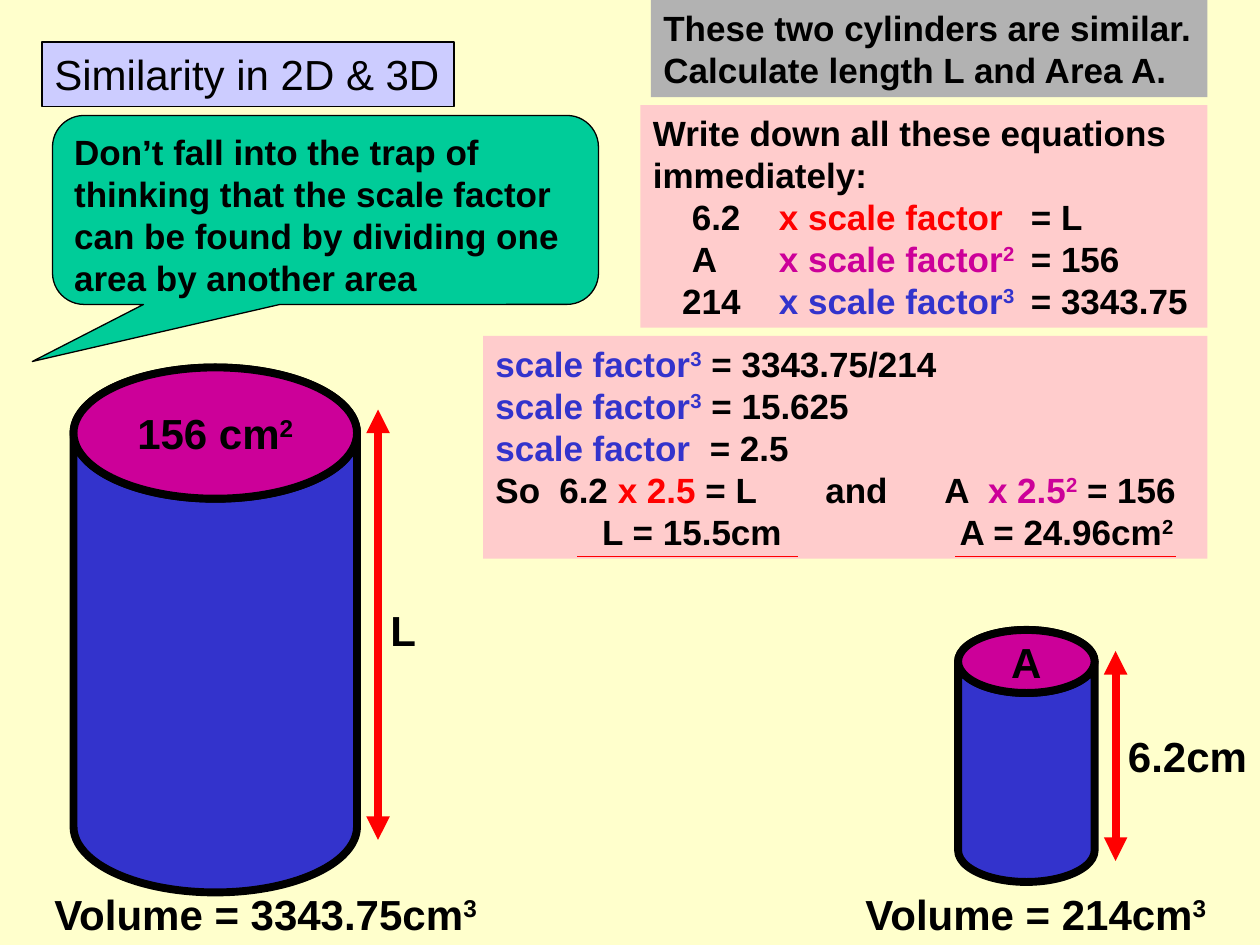
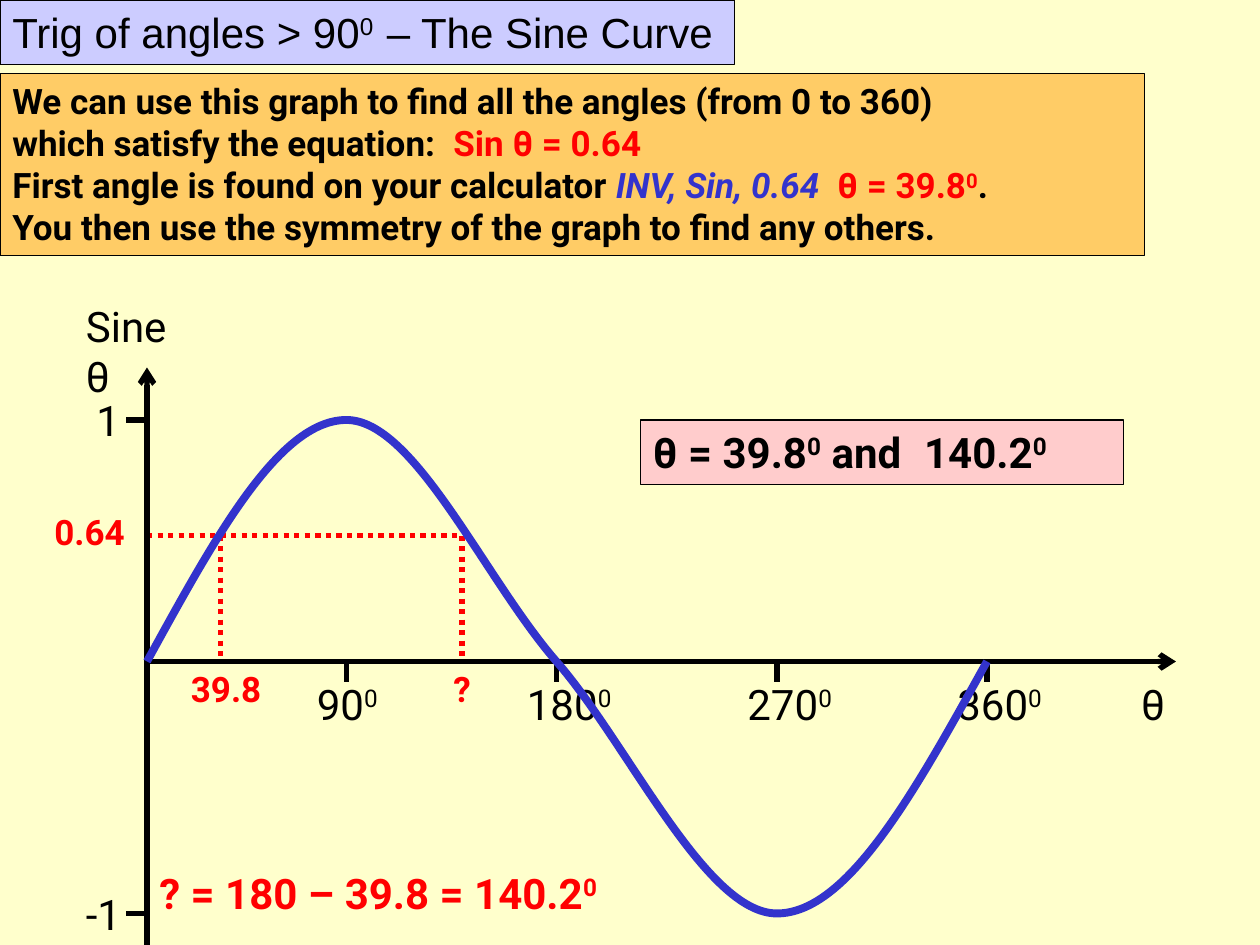
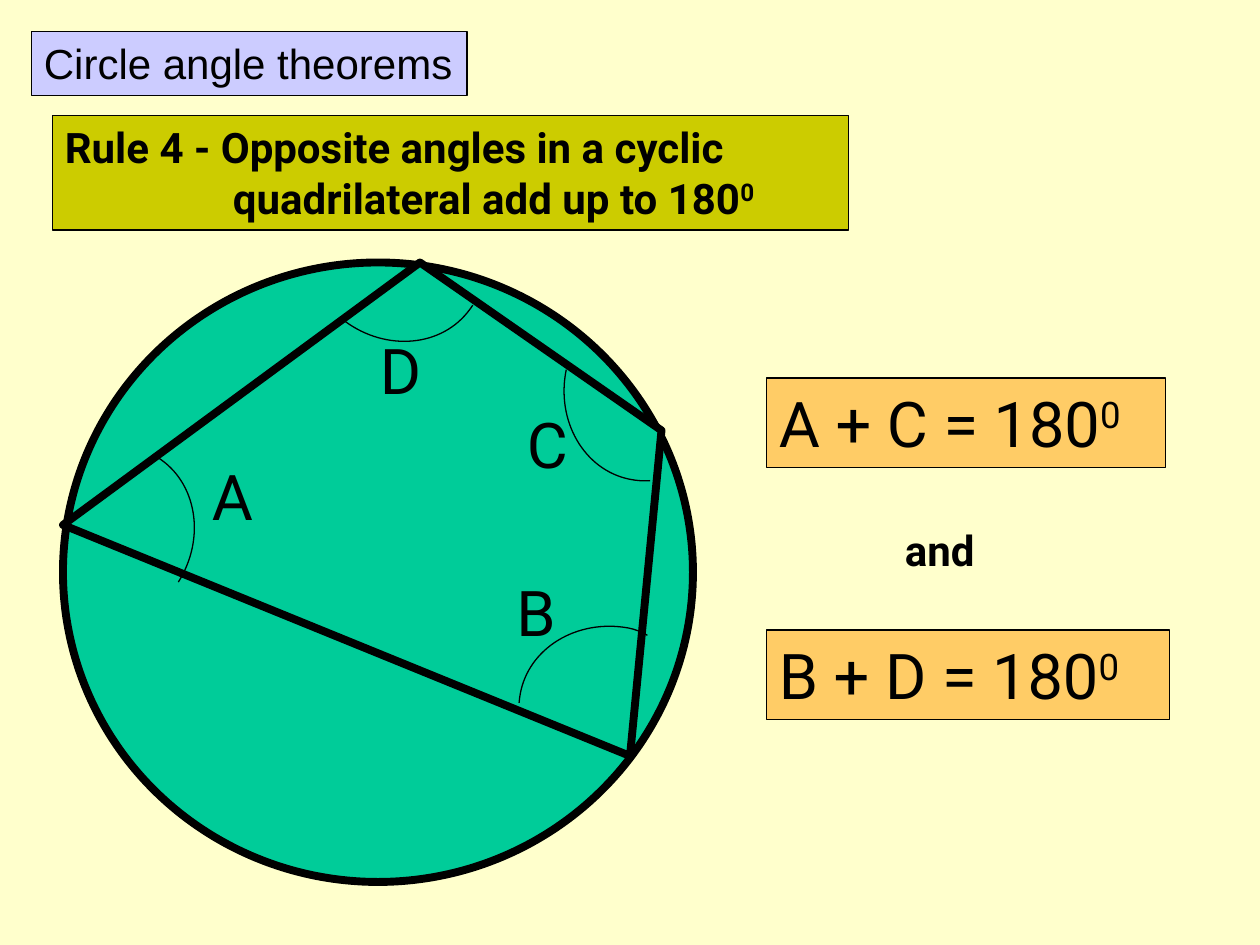
from dataclasses import dataclass

import lxml.etree
import pptx
import pptx.dml.color
import pptx.enum.dml
import pptx.enum.shapes
import pptx.enum.text
import pptx.oxml.ns
import pptx.util

Pt = pptx.util.Pt
Shape = pptx.enum.shapes.MSO_SHAPE
Align = pptx.enum.text.PP_ALIGN
Anchor = pptx.enum.text.MSO_ANCHOR
color_of = pptx.dml.color.RGBColor.from_string
qn = pptx.oxml.ns.qn


@dataclass(frozen=True)
class Theme:
    cream: str = "FFFFCC"
    lilac: str = "CCCCFF"
    gray: str = "B2B2B2"
    pink: str = "FFCCCC"
    orange: str = "FFCC66"
    olive: str = "CCCC00"
    green: str = "00CC99"
    blue: str = "3333CC"
    magenta: str = "CC0099"
    red: str = "FF0000"
    black: str = "000000"
    plain_font: str = "Arial"
    graph_font: str = "Roboto"
    body: int = 20
    heading: int = 24
    letter: int = 36
    thin: float = 0.75
    axis: float = 3
    thick: float = 4.5


theme = Theme()


def add_box(slide, place, lines=(), kind=None, fill=None, outline=0, size=theme.heading,
            font=theme.plain_font, bold=True, color=theme.black, centered=False,
            wrap=True, tabs=None, adjustments=()):
    """Add a shape, or a text box if kind is None.

    A line is a string or a list of runs: strings or (text, color, italic).
    Every second part between ^ marks is superscript. tabs maps line numbers to tab stops.
    """
    place = [Pt(length) for length in place]
    if kind is None:
        shape = slide.shapes.add_textbox(*place)
    else:
        shape = slide.shapes.add_shape(kind, *place)
        shape.shadow.inherit = False
        shape.fill.solid()
        shape.fill.fore_color.rgb = color_of(fill)
        if outline:
            shape.line.color.rgb = color_of(theme.black)
            shape.line.width = Pt(outline)
        else:
            shape.line.fill.background()
    for index, value in enumerate(adjustments):
        shape.adjustments[index] = value

    frame = shape.text_frame
    frame.word_wrap = wrap
    frame.vertical_anchor = Anchor.MIDDLE if centered else Anchor.TOP
    for number, line in enumerate(lines):
        paragraph = frame.add_paragraph() if number else frame.paragraphs[0]
        paragraph.alignment = Align.CENTER if centered else Align.LEFT
        stops = (tabs or {}).get(number)
        if stops:
            tab_list = lxml.etree.SubElement(paragraph._p.get_or_add_pPr(), qn("a:tabLst"))
            for stop in stops:
                lxml.etree.SubElement(tab_list, qn("a:tab"), pos=str(Pt(stop)), algn="l")
        paragraph.font.name = font
        paragraph.font.size = Pt(size)
        paragraph.font.bold = bold
        paragraph.font.color.rgb = color_of(color)
        for piece in [line] if isinstance(line, str) else line:
            text, run_color, *italic = (piece, None) if isinstance(piece, str) else piece
            for part_number, part in enumerate(text.split("^")):
                if not part:
                    continue
                run = paragraph.add_run()
                run.text = part
                if run_color:
                    run.font.color.rgb = color_of(run_color)
                if italic:
                    run.font.italic = True
                if part_number % 2:
                    run._r.get_or_add_rPr().set("baseline", "30000")
    return shape


def add_line(slide, start, end, color, width, dotted=False, head=None, tail=None):
    connector = slide.shapes.add_connector(
        pptx.enum.shapes.MSO_CONNECTOR.STRAIGHT, *[Pt(value) for value in (*start, *end)])
    connector.line.color.rgb = color_of(color)
    connector.line.width = Pt(width)
    if dotted:
        connector.line.dash_style = pptx.enum.dml.MSO_LINE.ROUND_DOT
    properties = connector._element.spPr
    for tag, arrow in (("a:headEnd", head), ("a:tailEnd", tail)):
        if arrow:
            lxml.etree.SubElement(properties.find(qn("a:ln")), qn(tag), type=arrow)
    lxml.etree.SubElement(properties, qn("a:effectLst"))


presentation = pptx.Presentation()
presentation.slide_width = Pt(720)
presentation.slide_height = Pt(540)
background = presentation.slide_master.background.fill
background.solid()
background.fore_color.rgb = color_of(theme.cream)

slides = []
for title, place in (
    ("Similarity in 2D & 3D", (24, 24, 235.5, 36.75)),
    ("Trig of angles > 90^0^\t– The Sine Curve", (0, 0, 419.75, 36.75)),
    ("Circle angle theorems", (18, 18, 249, 36.75)),
):
    slide = presentation.slides.add_slide(presentation.slide_layouts[6])
    add_box(slide, place, [title], Shape.RECTANGLE, theme.lilac, theme.thin,
            bold=False, wrap=False, tabs={0: (214,)})
    slides.append(slide)
similarity, sine, circle = slides

# Similarity: the two cylinders
for body, lid_height, ratio, area, arrow, length, length_place, volume, volume_place in (
    ((547.5, 360, 78, 144), 36, 0.462, "A", (637.5, 372, 492),
     "6.2cm", (637.5, 414, 83, 36), "Volume = 214cm^3", (487.5, 504, 222, 36)),
    ((42, 210, 162, 300), 75, 0.463, "156 cm^2", (216, 234, 480),
     "L", (216, 342, 29, 36), "Volume = 3343.75cm^3", (24, 504, 288, 36)),
):
    left, top, width, height = body
    add_box(similarity, body, kind=Shape.CAN, fill=theme.blue, outline=theme.thick,
            adjustments=[ratio])
    add_box(similarity, (left, top, width, lid_height), [area], Shape.OVAL, theme.magenta,
            theme.thick, centered=True, wrap=False)
    arrow_x, arrow_top, arrow_bottom = arrow
    add_line(similarity, (arrow_x, arrow_top), (arrow_x, arrow_bottom), theme.red, theme.thick,
             head="triangle", tail="triangle")
    add_box(similarity, length_place, [length], wrap=False)
    add_box(similarity, volume_place, [volume])

# Similarity: the question and its working
add_box(similarity, (372, 0, 318, 55.5),
        ["These two cylinders are similar.", "Calculate length L and Area A."],
        Shape.RECTANGLE, theme.gray, size=theme.body)
add_box(similarity, (366, 60, 324, 127.25), [
    "Write down all these equations",
    "immediately:",
    ["\t6.2\t", ("x scale factor", theme.red), "\t= L"],
    ["\tA\t", ("x scale factor^2", theme.magenta), "\t= 156"],
    ["\t214\t", ("x scale factor^3", theme.blue), "\t= 3343.75"],
], Shape.RECTANGLE, theme.pink, size=theme.body,
    tabs={2: (22.25, 72, 216), 3: (22.25, 72, 216), 4: (16.75, 72, 216)})
add_box(similarity, (276, 192, 414, 127.25), [
    [("scale factor^3", theme.blue), " = 3343.75/214"],
    [("scale factor^3", theme.blue), " = 15.625"],
    [("scale factor", theme.blue), "\t= 2.5"],
    ["So\t6.2 ", ("x 2.5", theme.red), " = L\tand\tA\t", ("x 2.5^2", theme.magenta), " = 156"],
    "\tL = 15.5cm\tA = 24.96cm^2",
], Shape.RECTANGLE, theme.pink, size=theme.body,
    tabs={2: (122.5,), 3: (36.5, 188.5, 256.5, 281.5), 4: (61, 265.25)})
for left in (330, 546):
    add_line(similarity, (left, 318), (left + 126, 318), theme.red, theme.thin)
add_box(similarity, (30, 66, 312, 108),
        ["Don’t fall into the trap of thinking that the scale factor "
         "can be found by dividing one area by another area"],
        Shape.ROUNDED_RECTANGULAR_CALLOUT, theme.green, theme.thin, theme.body,
        adjustments=(-0.537, 0.802, 0.167))

# Sine curve: readings, axes and scales
origin_x, origin_y = 84, 378
reading_y = 306
for start, end in (
    ((origin_x, reading_y), (126, reading_y)),
    ((126, reading_y), (126, origin_y)),
    ((origin_x, reading_y), (264, reading_y)),
    ((264, reading_y), (264, origin_y)),
):
    add_line(sine, start, end, theme.red, theme.axis, dotted=True)
for text, place in (
    ("?", (252, 378, 26, 31)),
    ("39.8", (102, 378, 59, 31)),
    ("0.64", (24, 288, 59, 31)),
):
    add_box(sine, place, [text], size=theme.body, font=theme.graph_font, color=theme.red,
            wrap=False)

add_line(sine, (origin_x, 210), (origin_x, 540), theme.black, theme.axis, head="arrow")
add_line(sine, (origin_x, origin_y), (672, origin_y), theme.black, theme.axis, tail="arrow")
for y in (522, 240):
    add_line(sine, (origin_x - 12, y), (origin_x, y), theme.black, theme.axis)
for x in (198, 318, 444, 564):
    add_line(sine, (x, origin_y), (x, origin_y + 12), theme.black, theme.axis)
add_box(sine, (42, 168, 79, 36), ["Sine θ"], font=theme.graph_font, bold=False)
for text, left, top, width in (
    ("θ", 645, 384, 27),
    ("90^0", 174, 384, 50),
    ("180^0", 294, 384, 63),
    ("270^0", 420, 384, 63),
    ("360^0", 540, 384, 63),
    ("1", 48, 222, 27),
    ("-1", 42, 504, 37),
):
    add_box(sine, (left, top, width, 36), [text], font=theme.graph_font, bold=False, wrap=False)

add_box(sine, (84, 492, 306, 36), ["? = 180 – 39.8 = 140.2^0"], font=theme.graph_font,
        color=theme.red)
add_box(sine, (366, 240, 276, 36.75), ["θ = 39.8^0^ and\t140.2^0"], Shape.RECTANGLE, theme.pink,
        theme.thin, font=theme.graph_font, tabs={0: (155,)})
add_box(sine, (0, 42, 654, 104), [
    "We can use this graph to find all the angles (from 0 to 360)",
    ["which satisfy the equation:\t", ("Sin θ = 0.64", theme.red)],
    ["First angle is found on your calculator ", ("INV, Sin, 0.64", theme.blue, True),
     ("\tθ = 39.8^0", theme.red), "."],
    "You then use the symmetry of the graph to find any others.",
], Shape.RECTANGLE, theme.orange, theme.thin, theme.body, theme.graph_font,
    tabs={1: (252,), 2: (471.5,)})

# Circle theorem: rule, cyclic quadrilateral and angle sums
add_box(circle, (30, 66, 455, 65.5),
        ["Rule 4 - Opposite angles in a cyclic", "\tquadrilateral add up to 180^0"],
        Shape.RECTANGLE, theme.olive, theme.thin, font=theme.graph_font, tabs={1: (96,)})
add_box(circle, (36, 150, 360, 354), kind=Shape.OVAL, fill=theme.green, outline=theme.thick)
corners = [(Pt(x), Pt(y)) for x, y in ((36, 300), (240, 150), (378, 246), (360, 432))]
builder = circle.shapes.build_freeform(*corners[0])
builder.add_line_segments(corners[1:], close=True)
quadrilateral = builder.convert_to_shape()
quadrilateral.shadow.inherit = False
quadrilateral.fill.solid()
quadrilateral.fill.fore_color.rgb = color_of(theme.green)
quadrilateral.line.color.rgb = color_of(theme.black)
quadrilateral.line.width = Pt(theme.thick)

# Sine wave and angle arcs: points are relative to the unrotated place;
# after the start, each row holds two controls and an end
for slide, color, width, place, rotation, start, curves in (
    (sine, theme.blue, theme.thick, (84, 240, 480, 282), 0, (0, 138), (
        ((38, 69), (75, 0), (114, 0)),
        ((153, 0), (193, 91), (234, 138)),
        ((275, 185), (319, 282), (360, 282)),
        ((401, 282), (440, 210), (480, 138)))),
    (circle, theme.black, theme.thin, (72, 270, 48, 54), 32.2, (0, 0), (
        ((26.5, 0), (48, 24.2), (48, 54)),)),
    (circle, theme.black, theme.thin, (206, 151.2, 53.3, 54), 129.1, (0, 0.3), (
        ((1.8, 0.1), (3.5, 0), (5.3, 0)),
        ((31.8, 0), (53.3, 24.2), (53.3, 54)))),
    (circle, theme.black, theme.thin, (317.5, 216.7, 59.8, 54), 191.7, (0, 1.6), (
        ((3.9, 0.5), (7.8, 0), (11.8, 0)),
        ((38.3, 0), (59.8, 24.2), (59.8, 54)))),
    (circle, theme.black, theme.thin, (306.7, 348.5, 53.3, 65.5), 280.3, (0, 0.3), (
        ((1.8, 0.1), (3.5, 0), (5.3, 0)),
        ((31.8, 0), (53.3, 24.2), (53.3, 54)),
        ((53.3, 57.9), (52.5, 61.7), (51.2, 65.5)))),
):
    left, top, across, down = place
    builder = slide.shapes.build_freeform(Pt(left), Pt(top))
    builder.add_line_segments([(Pt(left + across), Pt(top + down))], close=False)
    curve = builder.convert_to_shape()
    curve.shadow.inherit = False
    curve.fill.background()
    curve.line.color.rgb = color_of(color)
    curve.line.width = Pt(width)
    curve.rotation = rotation
    outline = next(curve._element.iter(qn("a:path")))
    for segment in list(outline):
        outline.remove(segment)
    for tag, points in (("a:moveTo", [start]), *[("a:cubicBezTo", points) for points in curves]):
        segment = lxml.etree.SubElement(outline, qn(tag))
        for x, y in points:
            lxml.etree.SubElement(segment, qn("a:pt"), x=str(Pt(x)), y=str(Pt(y)))

for letter, left, top, width in (
    ("B", 288, 324, 36), ("C", 294, 228, 36), ("D", 210, 186, 39), ("A", 114, 258, 36),
):
    add_box(circle, (left, top, width, 50.5), [letter], size=theme.letter,
            font=theme.graph_font, bold=False, wrap=False)
for angle_sum, top, width in (("A + C = 180^0", 216, 228), ("B + D = 180^0", 360, 230.5)):
    add_box(circle, (438, top, width, 51), [angle_sum], Shape.RECTANGLE, theme.orange,
            theme.thin, theme.letter, theme.graph_font, bold=False)
add_box(circle, (510, 296, 59, 36), ["and"], font=theme.graph_font, wrap=False)

presentation.save("out.pptx")
